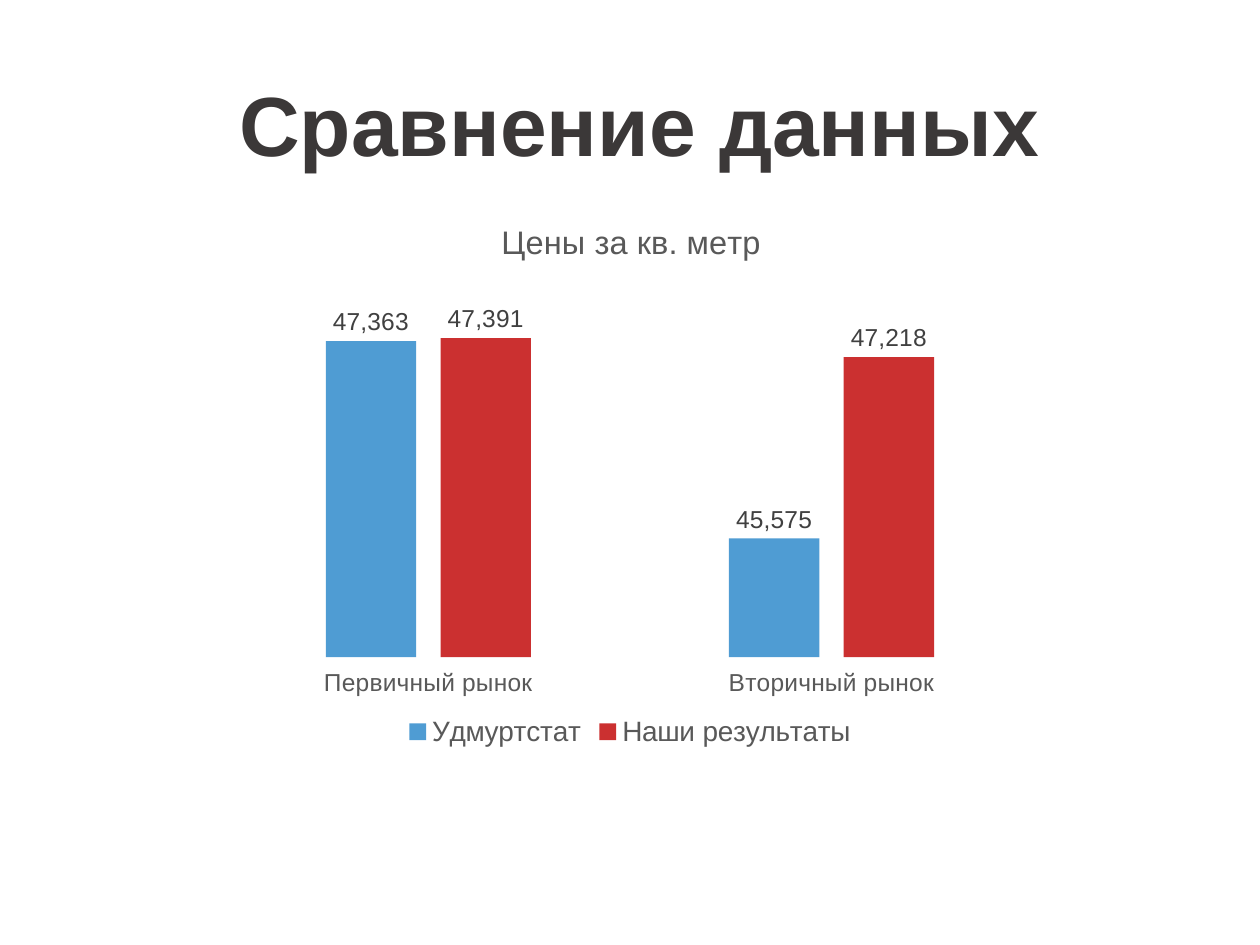
from lxml.etree import SubElement
from pptx import Presentation
from pptx.chart.data import CategoryChartData
from pptx.dml.color import RGBColor
from pptx.enum.chart import XL_CHART_TYPE, XL_LABEL_POSITION, XL_LEGEND_POSITION, XL_TICK_LABEL_POSITION, XL_TICK_MARK
from pptx.enum.text import MSO_ANCHOR, PP_ALIGN
from pptx.oxml import parse_xml
from pptx.oxml.ns import nsdecls, qn
from pptx.util import Pt

COLORS = {
    "heading": "3B3838",
    "caption": "595959",
    "value": "404040",
    "statistics": "0070C0",
    "results": "C00000",
}
MARKETS = ["Первичный рынок", "Вторичный рынок"]
PRICES = [
    ("Удмуртстат", [47363, 45575], "statistics", 69),
    ("Наши результаты", [47391, 47218], "results", 81),
]
NUMBER_FORMAT = "#,##0"


def assign(target, values):
    for name, value in values.items():
        setattr(target, name, value)


def style_font(font, size, color, bold=False):
    assign(font, {"name": "Arial", "size": Pt(size), "bold": bold})
    font.color.rgb = RGBColor.from_string(COLORS[color])


def add_heading(slide, text):
    heading = slide.shapes.title
    assign(heading, {"left": Pt(76.3), "top": Pt(37.4), "width": Pt(578), "height": Pt(65.5)})
    frame = heading.text_frame
    assign(frame, {"text": text, "word_wrap": True, "vertical_anchor": MSO_ANCHOR.MIDDLE})
    paragraph = frame.paragraphs[0]
    paragraph.alignment = PP_ALIGN.CENTER
    style_font(paragraph.runs[0].font, 48, "heading", True)


def manual_layout(fractions, inner=False):
    target = '<c:layoutTarget val="inner"/>' if inner else ""
    modes = "".join(f'<c:{side}Mode val="edge"/>' for side in "xy")
    sizes = "".join(f'<c:{key} val="{value}"/>' for key, value in fractions.items())
    return parse_xml(
        f'<c:layout {nsdecls("c")}><c:manualLayout>{target}{modes}{sizes}</c:manualLayout></c:layout>'
    )


def place_plot(chart, fractions):
    plot_area = chart.plots[0]._element.getparent()
    for layout in plot_area.findall(qn("c:layout")):
        plot_area.remove(layout)
    plot_area.insert(0, manual_layout(fractions, True))


def add_caption(chart, text):
    chart.has_title = True
    title = chart.chart_title
    title.include_in_layout = False
    title.text_frame.text = text
    style_font(title.text_frame.paragraphs[0].runs[0].font, 18.6, "caption")
    element = title._element
    for layout in element.findall(qn("c:layout")):
        element.remove(layout)
    element.find(qn("c:tx")).addnext(manual_layout({"x": 0.34, "y": 0.04}))


def style_series(series, color, opacity):
    fill = series.format.fill
    fill.solid()
    fill.fore_color.rgb = RGBColor.from_string(COLORS[color])
    shade = series._element.find(".//" + qn("a:srgbClr"))
    SubElement(shade, qn("a:alpha"), val=str(opacity * 1000))
    series.format.line.fill.background()
    labels = series.data_labels
    assign(labels, {
        "show_value": True,
        "position": XL_LABEL_POSITION.OUTSIDE_END,
        "number_format": NUMBER_FORMAT,
        "number_format_is_linked": False,
    })
    style_font(labels.font, 14, "value")


def style_axes(chart):
    markets, prices = chart.category_axis, chart.value_axis
    assign(markets, {
        "major_tick_mark": XL_TICK_MARK.NONE,
        "minor_tick_mark": XL_TICK_MARK.NONE,
        "tick_label_position": XL_TICK_LABEL_POSITION.LOW,
        "has_major_gridlines": False,
    })
    markets.format.line.fill.background()
    style_font(markets.tick_labels.font, 14, "caption")
    assign(prices, {
        "visible": False,
        "has_major_gridlines": False,
        "minimum_scale": 44500,
        "maximum_scale": 48000,
    })


def add_price_chart(slide):
    data = CategoryChartData(number_format=NUMBER_FORMAT)
    data.categories = MARKETS
    for name, values, _, _ in PRICES:
        data.add_series(name, values)
    chart = slide.shapes.add_chart(
        XL_CHART_TYPE.COLUMN_CLUSTERED, Pt(120), Pt(110), Pt(480), Pt(320), data
    ).chart
    chart.font.name = "Arial"
    add_caption(chart, "Цены за кв. метр")
    assign(chart.plots[0], {"gap_width": 219, "overlap": -27, "vary_by_categories": False})
    for series, (_, _, color, opacity) in zip(chart.plots[0].series, PRICES):
        style_series(series, color, opacity)
    style_axes(chart)
    chart.has_legend = True
    assign(chart.legend, {"position": XL_LEGEND_POSITION.BOTTOM, "include_in_layout": False})
    style_font(chart.legend.font, 16, "caption")
    place_plot(chart, {"x": 0.02, "y": 0.14, "w": 0.96, "h": 0.69})


def main():
    presentation = Presentation()
    assign(presentation, {"slide_width": Pt(720), "slide_height": Pt(540)})
    slide = presentation.slides.add_slide(presentation.slide_layouts[5])
    add_heading(slide, "Сравнение данных")
    add_price_chart(slide)
    presentation.save("out.pptx")


if __name__ == "__main__":
    main()
